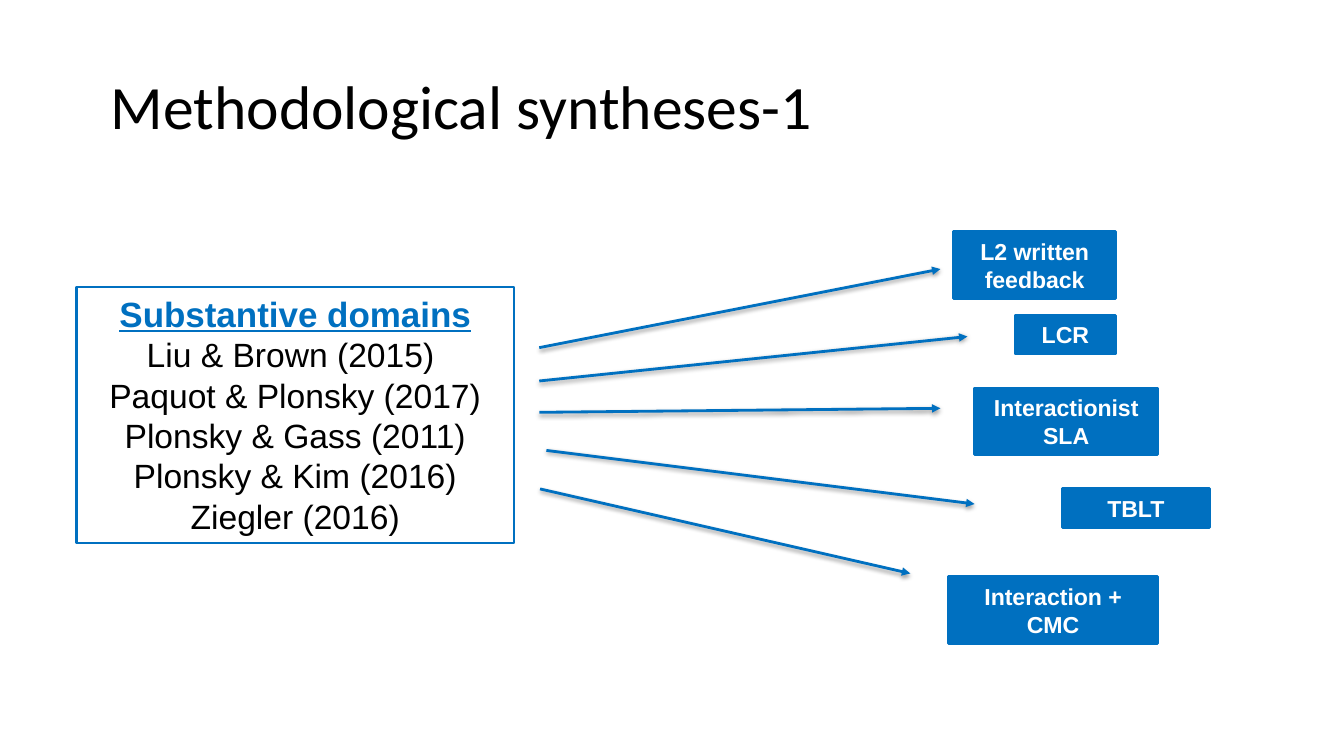
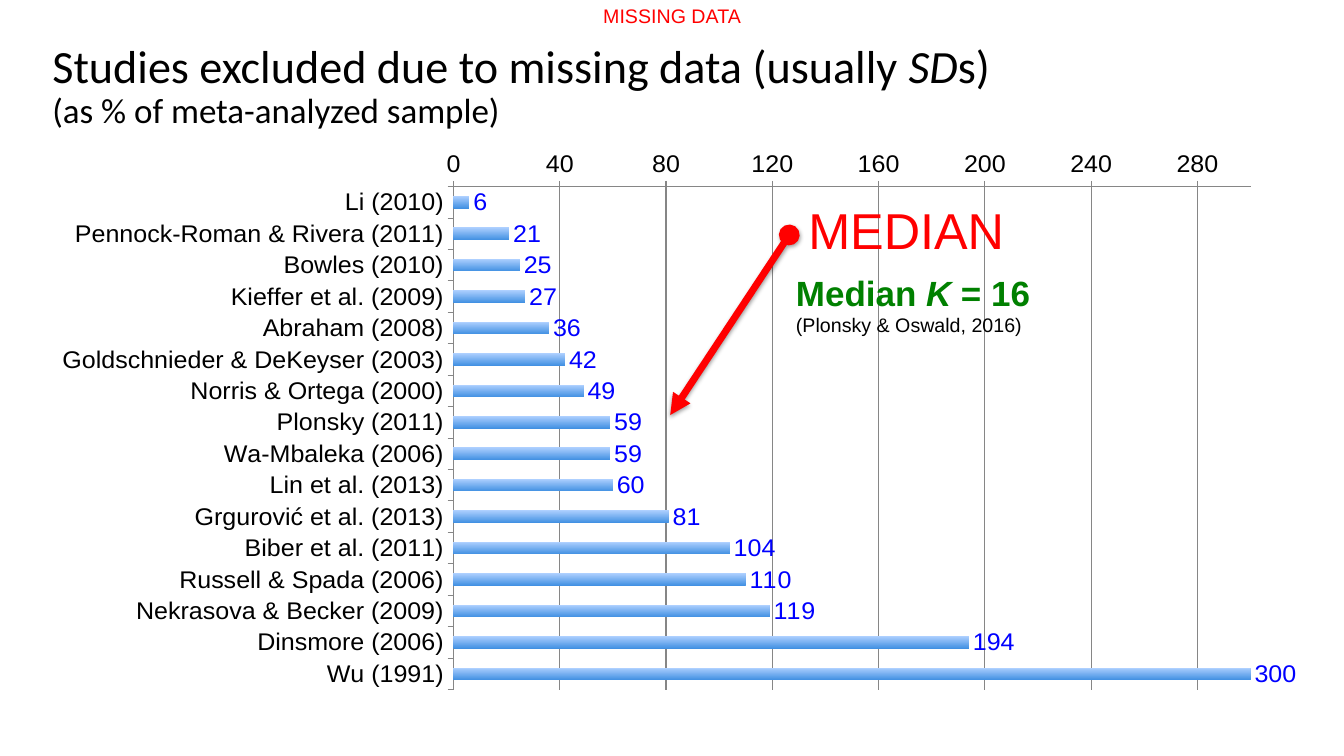
from lxml import etree
from pptx import Presentation
from pptx.chart.data import CategoryChartData
from pptx.dml.color import RGBColor
from pptx.enum.chart import XL_AXIS_CROSSES, XL_CHART_TYPE, XL_LABEL_POSITION, XL_TICK_MARK
from pptx.enum.shapes import MSO_CONNECTOR, MSO_SHAPE
from pptx.enum.text import MSO_ANCHOR, PP_ALIGN
from pptx.oxml import parse_xml
from pptx.oxml.ns import nsdecls, qn
from pptx.util import Cm, Pt

RECT = MSO_SHAPE.RECTANGLE
LINE = MSO_CONNECTOR.STRAIGHT
LEFT, MID = PP_ALIGN.LEFT, PP_ALIGN.CENTER
TOP, CENTER = MSO_ANCHOR.TOP, MSO_ANCHOR.MIDDLE
BARS = XL_CHART_TYPE.BAR_CLUSTERED
LAST = XL_AXIS_CROSSES.MAXIMUM
OUT = XL_TICK_MARK.OUTSIDE
END = XL_LABEL_POSITION.OUTSIDE_END

HUES = {
    "blue": "0070C0", "white": "FFFFFF", "black": "000000", "red": "FF0000",
    "green": "008000", "label": "0000FF", "grid": "868686",
    "light": "AED0FF", "deep": "4190E2",
}
BODY, HEAD = "Arial", "Calibri"
BREAK = "\n"

WORKS = ["Liu & Brown (2015) ", "Paquot & Plonsky (2017)", "Plonsky & Gass (2011)",
         "Plonsky & Kim (2016)", "Ziegler (2016)"]
TALL, LOW = 1.68, 0.97
FIELDS = [
    (["L2 written feedback"], (22.1, 0, 4.09, TALL), (11.66, 2.92), (21.77, 0.94)),
    (["LCR"], (23.65, 2.11, 2.54, LOW), (11.66, 3.76), (22.45, 2.64)),
    (["Interactionist", BREAK, "SLA"], (22.63, 3.94, 4.62, TALL), (11.66, 4.55), (21.77, 4.45)),
    (["TBLT"], (24.84, 6.48, 3.71, LOW), (11.84, 5.51), (22.63, 6.86)),
    (["Interaction + CMC"], (21.97, 8.69, 5.28, TALL), (11.68, 6.48), (21.01, 8.61)),
]
COUNTS = {
    "Li (2010)": 6, "Pennock-Roman & Rivera (2011)": 21, "Bowles (2010)": 25,
    "Kieffer et al. (2009)": 27, "Abraham (2008)": 36,
    "Goldschnieder & DeKeyser (2003)": 42, "Norris & Ortega (2000)": 49,
    "Plonsky (2011)": 59, "Wa-Mbaleka (2006)": 59, "Lin et al. (2013)": 60,
    "Grgurović et al. (2013)": 81, "Biber et al. (2011)": 104,
    "Russell & Spada (2006)": 110, "Nekrasova & Becker (2009)": 119,
    "Dinsmore (2006)": 194, "Wu (1991)": 300,
}


def hue(name):
    return RGBColor.from_string(HUES[name])


def shift(box, part):
    return (box[0] + part[0], box[1] + part[1], *part[2:])


def style(font, size=18, color="black", face=BODY, bold=False, slant=False, under=False):
    font.size, font.name = Pt(size), face
    font.bold, font.italic, font.underline = bold, slant, under
    font.color.rgb = hue(color)


def write(shape, paras, align=LEFT, anchor=TOP, space=None, inset=None, **base):
    frame = shape.text_frame
    frame.word_wrap = True
    frame.vertical_anchor = anchor
    if inset:
        frame.margin_left = frame.margin_right = Cm(inset)
        frame.margin_top = frame.margin_bottom = Cm(inset)
    for n, parts in enumerate(paras):
        para = frame.add_paragraph() if n else frame.paragraphs[0]
        para.alignment = align
        if space:
            para.line_spacing = space
        for part in parts:
            if part == BREAK:
                para.add_line_break()
                continue
            words, extra = (part, {}) if isinstance(part, str) else part
            run = para.add_run()
            run.text = words
            style(run.font, **{**base, **extra})


def note(slide, box, paras, **form):
    shape = slide.shapes.add_textbox(*map(Cm, box))
    write(shape, paras, **form)


def title(slide, box, parts, size):
    note(slide, box, [parts], size=size, face=HEAD, anchor=CENTER, space=0.9, inset=0.25)


def panel(slide, box, paras, fill="blue", width=2, **form):
    shape = slide.shapes.add_shape(RECT, *map(Cm, box))
    shape.shadow.inherit = False
    shape.fill.solid()
    shape.fill.fore_color.rgb = hue(fill)
    shape.line.color.rgb = hue("blue")
    shape.line.width = Pt(width)
    write(shape, paras, align=MID, **form)


def arrow(slide, start, stop, color="blue", width=2, head=None):
    link = slide.shapes.add_connector(LINE, *map(Cm, (*start, *stop)))
    link.line.color.rgb = hue(color)
    link.line.width = Pt(width)
    edge = link.line._get_or_add_ln()
    if head:
        etree.SubElement(edge, qn("a:headEnd"), type=head)
    etree.SubElement(edge, qn("a:tailEnd"), type="triangle")
    edge.addnext(parse_xml(
        f'<a:effectLst {nsdecls("a")}>'
        '<a:outerShdw blurRad="40000" dist="20000" dir="5400000" rotWithShape="0">'
        '<a:srgbClr val="000000"><a:alpha val="38000"/></a:srgbClr>'
        '</a:outerShdw></a:effectLst>'))


def domains(slide, box):
    top = ("Substantive domains", dict(size=25, color="blue", bold=True, under=True))
    panel(slide, shift(box, (0, 1.4, 11.02, 6.45)), [[top]] + [[work] for work in WORKS],
          fill="white", width=1.5, size=24)
    for words, spot, start, stop in FIELDS:
        arrow(slide, shift(box, start), shift(box, stop))
        panel(slide, shift(box, spot), [words], size=16.5, color="white", bold=True,
              anchor=CENTER)


def place(chart, x, y, w, h):
    area = chart._chartSpace.chart.plotArea
    for old in area.findall(qn("c:layout")):
        area.remove(old)
    rules = [("layoutTarget", "inner"), ("xMode", "edge"), ("yMode", "edge"),
             ("x", x), ("y", y), ("w", w), ("h", h)]
    layout = etree.Element(qn("c:layout"))
    manual = etree.SubElement(layout, qn("c:manualLayout"))
    for name, value in rules:
        etree.SubElement(manual, qn("c:" + name), val=str(value))
    area.insert(0, layout)


def graph(slide, box):
    data = CategoryChartData()
    data.categories = list(COUNTS)
    data.add_series("Series 1", list(COUNTS.values()))
    chart = slide.shapes.add_chart(BARS, *map(Cm, box), data).chart
    chart.has_legend = chart.has_title = False
    style(chart.font, size=10)
    place(chart, 0.33, 0.02, 0.64, 0.89)

    cats, vals = chart.category_axis, chart.value_axis
    for axis in (cats, vals):
        style(axis.tick_labels.font)
        axis.major_tick_mark = OUT
        axis.format.line.color.rgb = hue("grid")
    cats.reverse_order = True
    cats.crosses = LAST
    vals.minimum_scale, vals.maximum_scale, vals.major_unit = 0, 300, 40
    vals.has_major_gridlines = True
    vals.major_gridlines.format.line.color.rgb = hue("grid")

    plot = chart.plots[0]
    plot.gap_width, plot.vary_by_categories = 150, False
    fill = plot.series[0].format.fill
    fill.gradient()
    fill.gradient_angle = 90
    for stop, name in zip(fill.gradient_stops, ("deep", "light")):
        stop.color.rgb = hue(name)
    plot.has_data_labels = True
    labels = plot.data_labels
    labels.show_value, labels.position = True, END
    style(labels.font, color="label")


def median(slide, box):
    note(slide, shift(box, (19.05, 1.12, 6.53, 1.8)), [["MEDIAN"]], size=36, color="red")
    note(slide, shift(box, (18.74, 2.93, 8.59, 1.96)),
         [["Median ", ("K", dict(slant=True)), " = 16 ", BREAK,
           ("(Plonsky & Oswald, 2016)", dict(size=14, color="black", bold=False))]],
         size=25, color="green", bold=True)
    arrow(slide, shift(box, (18.82, 2.14)), shift(box, (15.82, 6.68)),
          color="red", width=5, head="oval")


def main():
    deck = Presentation()
    deck.slide_width, deck.slide_height = Cm(33.87), Cm(19.05)
    blank = deck.slide_layouts[6]

    slide = deck.slides.add_slide(blank)
    title(slide, (2.54, 0.94, 30.05, 3.66), ["Methodological syntheses-1"], 44)
    domains(slide, (1.93, 5.84))

    slide = deck.slides.add_slide(blank)
    area = (1.07, 3.78, 31.6, 14.88)
    graph(slide, area)
    title(slide, (1.07, 0.61, 31.6, 3.18),
          ["Studies excluded due to missing data (usually ", ("SD", dict(slant=True)), "s) ",
           BREAK, ("(as % of meta-analyzed sample)", dict(size=25))], 33)
    note(slide, (4.24, -0.03, 25.4, 0.86), [["MISSING DATA"]], size=14, color="red", align=MID)
    median(slide, area)

    deck.save("out.pptx")


if __name__ == "__main__":
    main()
